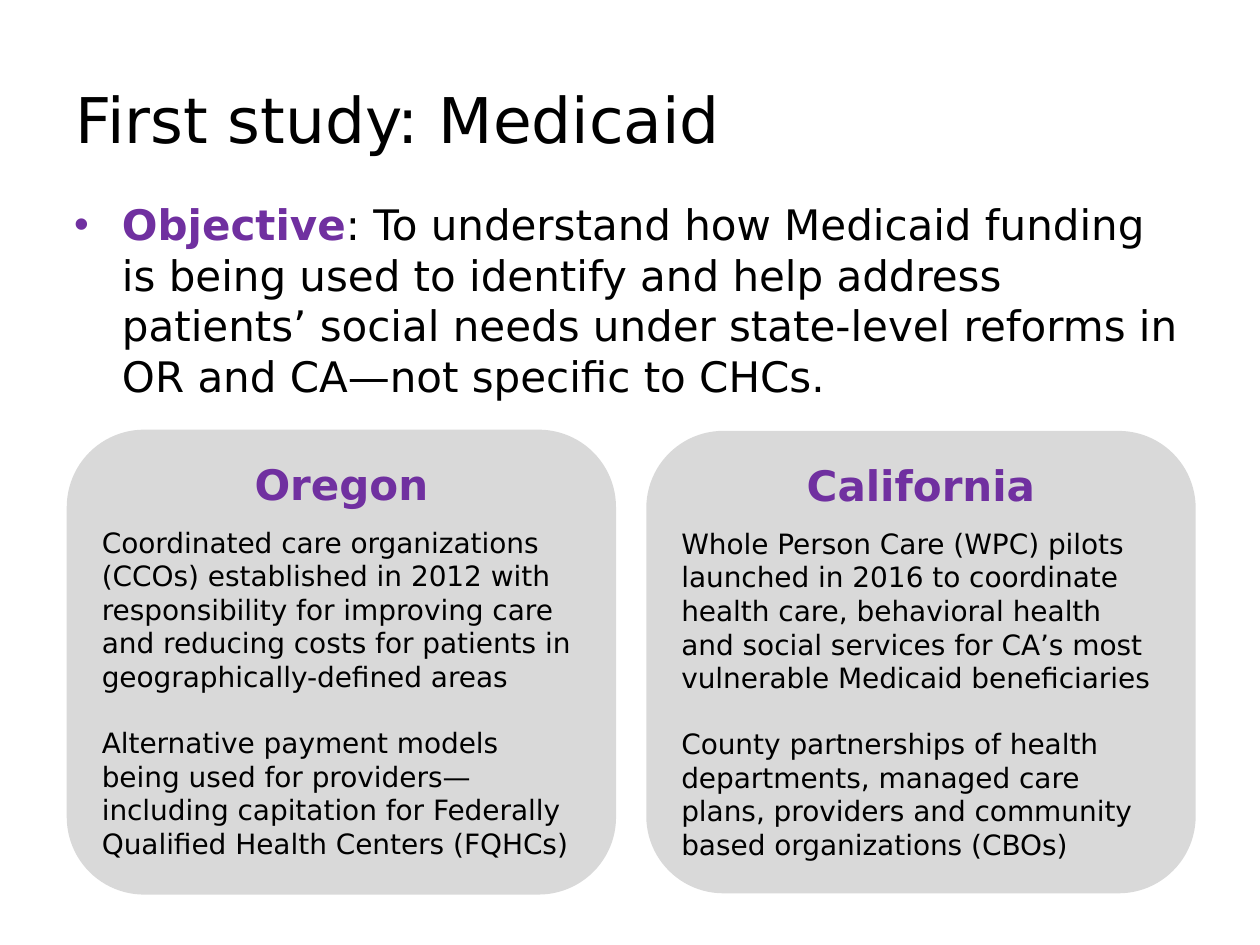
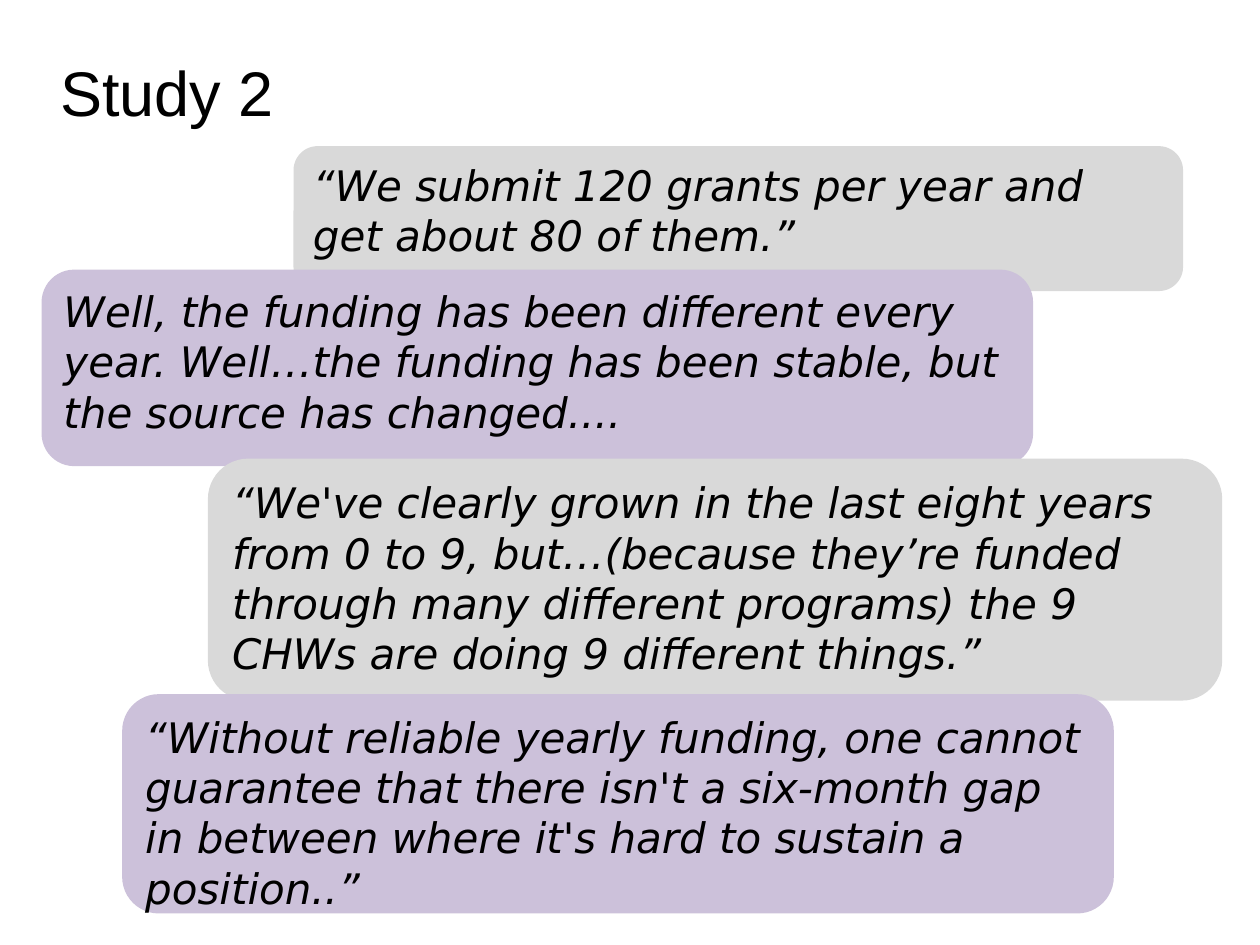
from dataclasses import dataclass

from lxml import etree
from pptx import Presentation
from pptx.dml.color import RGBColor
from pptx.enum.shapes import MSO_SHAPE as Shape
from pptx.enum.text import MSO_ANCHOR as Anchor, PP_ALIGN as Align
from pptx.oxml.ns import qn
from pptx.util import Inches, Pt


@dataclass(frozen=True)
class Theme:
    ink: RGBColor = RGBColor(0x00, 0x00, 0x00)
    accent: RGBColor = RGBColor(0x70, 0x30, 0xA0)
    grey: RGBColor = RGBColor(0xD9, 0xD9, 0xD9)
    lilac: RGBColor = RGBColor(0xCC, 0xC1, 0xDA)
    font: str = "DejaVu Sans"
    title_size: int = 36
    lead_size: int = 24
    body_size: int = 16
    heading_gap: float = 9.3
    body_gap: float = 18.6
    bullet_indent: float = 0.38


class SlideWriter:
    def __init__(self, deck, theme):
        self.deck = deck
        self.theme = theme
        self.page = None

    def new_page(self):
        self.page = self.deck.slides.add_slide(self.deck.slide_layouts[6])

    def set_font(self, font, size, color=None, bold=False, italic=False, name=None):
        font.name = name or self.theme.font
        font.size = Pt(size)
        font.bold = bold
        font.italic = italic
        font.color.rgb = color or self.theme.ink

    def text_frame(self, left, top, width, height):
        box = self.page.shapes.add_textbox(
            Inches(left), Inches(top), Inches(width), Inches(height))
        box.text_frame.word_wrap = True
        return box.text_frame

    def title(self, text, left, top, width, font=None):
        frame = self.text_frame(left, top, width, 1.25)
        frame.vertical_anchor = Anchor.MIDDLE
        para = frame.paragraphs[0]
        para.text = text
        self.set_font(para.font, self.theme.title_size, name=font)

    def bullet(self, label, text, left, top, width, height):
        para = self.text_frame(left, top, width, height).paragraphs[0]
        for words, color, bold in ((label, self.theme.accent, True),
                                   (text, self.theme.ink, False)):
            span = para.add_run()
            span.text = words
            self.set_font(span.font, self.theme.lead_size, color, bold)
        # Hanging bullet
        props = para._p.get_or_add_pPr()
        indent = Inches(self.theme.bullet_indent)
        props.set("marL", str(indent))
        props.set("indent", str(-indent))
        etree.SubElement(props, qn("a:buFont")).set("typeface", "Arial")
        etree.SubElement(props, qn("a:buChar")).set("char", "•")

    def panel(self, left, top, width, height, fill):
        shape = self.page.shapes.add_shape(
            Shape.ROUNDED_RECTANGLE,
            Inches(left), Inches(top), Inches(width), Inches(height))
        shape.shadow.inherit = False
        shape.fill.solid()
        shape.fill.fore_color.rgb = fill
        shape.line.fill.background()
        frame = shape.text_frame
        frame.word_wrap = True
        frame.vertical_anchor = Anchor.TOP
        frame.paragraphs[0].alignment = Align.LEFT
        return frame

    def card(self, heading, points, left, top, width, height):
        frame = self.panel(left, top, width, height, self.theme.grey)
        head = frame.paragraphs[0]
        head.text = heading
        head.alignment = Align.CENTER
        head.space_after = Pt(self.theme.heading_gap)
        self.set_font(head.font, self.theme.lead_size, self.theme.accent, bold=True)
        for index, point in enumerate(points):
            para = frame.add_paragraph()
            para.text = point
            para.alignment = Align.LEFT
            if index:
                para.space_before = Pt(self.theme.body_gap)
            self.set_font(para.font, self.theme.body_size)

    def quote(self, text, left, top, width, height, fill):
        para = self.panel(left, top, width, height, fill).paragraphs[0]
        para.text = text
        self.set_font(para.font, self.theme.lead_size, italic=True)


def medicaid_slide(writer):
    writer.new_page()
    writer.title("First study: Medicaid", 0.5, 0.31, 9.12)
    writer.bullet(
        "Objective",
        ": To understand how Medicaid funding is being used to identify and help "
        "address patients’ social needs under state-level reforms in OR and "
        "CA—not specific to CHCs.",
        0.49, 1.53, 9, 0.87)

    # State cards
    writer.card("Oregon", (
        "Coordinated care organizations (CCOs) established in 2012 with "
        "responsibility for improving care and reducing costs for patients in "
        "geographically-defined areas",
        "Alternative payment models being used for providers—including "
        "capitation for Federally Qualified Health Centers (FQHCs)",
    ), 0.53, 3.41, 4.36, 3.69)
    writer.card("California", (
        "Whole Person Care (WPC) pilots launched in 2016 to coordinate health "
        "care, behavioral health and social services for CA’s most vulnerable "
        "Medicaid beneficiaries",
        "County partnerships of health departments, managed care plans, "
        "providers and community based organizations (CBOs)",
    ), 5.13, 3.42, 4.36, 3.67)


def quotes_slide(writer):
    writer.new_page()
    writer.title("Study 2", 0.38, 0.1, 9, font="Arial")

    # Overlapping quotes in alternating colours
    quotes = (
        ("“We submit 120 grants per year and get about 80 of them.”",
         2.33, 1.16, 7.06, 1.15),
        ("Well, the funding has been different every year. Well…the funding has "
         "been stable, but the source has changed....",
         0.33, 2.14, 7.87, 1.56),
        ("“We've clearly grown in the last eight years from 0 to 9, "
         "but…(because they’re funded through many different programs) the 9 "
         "CHWs are doing 9 different things.”",
         1.65, 3.64, 8.05, 1.92),
        ("“Without reliable yearly funding, one cannot guarantee that there "
         "isn't a six-month gap in between where it's hard to sustain a "
         "position..”",
         0.97, 5.51, 7.87, 1.74),
    )
    fills = (writer.theme.grey, writer.theme.lilac)
    for index, (text, *place) in enumerate(quotes):
        writer.quote(text, *place, fills[index % 2])


def main():
    deck = Presentation()
    deck.slide_width = Inches(10)
    deck.slide_height = Inches(7.5)
    writer = SlideWriter(deck, Theme())
    medicaid_slide(writer)
    quotes_slide(writer)
    deck.save("out.pptx")


if __name__ == "__main__":
    main()
